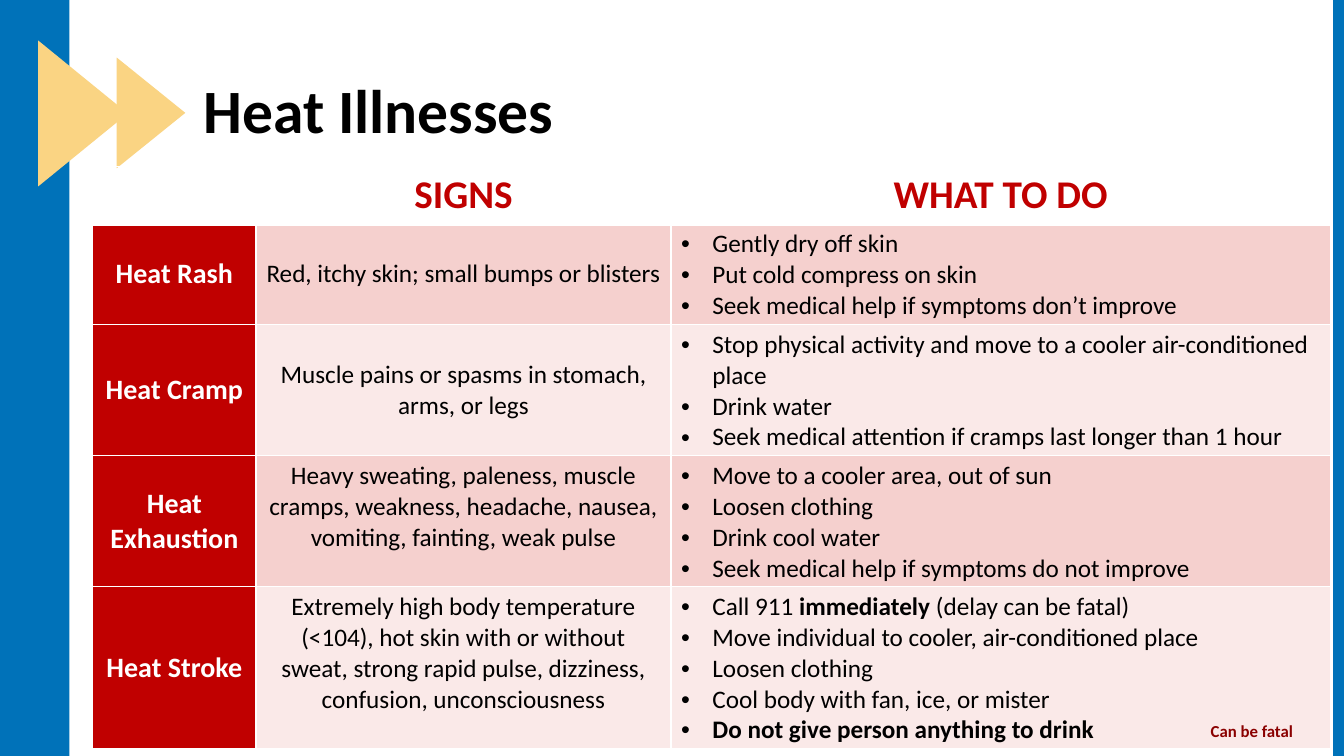
from dataclasses import dataclass
from lxml.etree import SubElement
from pptx import Presentation
from pptx.dml.color import RGBColor
from pptx.enum.shapes import MSO_SHAPE
from pptx.enum.text import MSO_ANCHOR, PP_ALIGN
from pptx.oxml.ns import qn
from pptx.util import Cm, Pt


@dataclass(frozen=True)
class Theme:
    font: str = "Calibri"
    blue: str = "0072B9"
    gold: str = "FAD483"
    red: str = "C00000"
    dark_red: str = "8A0000"
    white: str = "FFFFFF"
    black: str = "000000"
    bands: tuple = ("F5D0CE", "FAE9E8")
    title_size: int = 44
    header_size: int = 28
    label_size: int = 20
    body_size: int = 18
    note_size: int = 12


theme = Theme()


def add_text(para, text, size, color, bold=False):
    span = para.add_run()
    span.text = text
    span.font.name = theme.font
    span.font.size = Pt(size)
    span.font.bold = bold
    span.font.color.rgb = RGBColor.from_string(color)


def style_cell(cell, fill, bottom_width):
    properties = cell._tc.get_or_add_tcPr()
    for side, width in (("L", 1), ("R", 1), ("T", 1), ("B", bottom_width)):
        border = SubElement(properties, qn(f"a:ln{side}"), w=str(Pt(width)))
        border_fill = SubElement(border, qn("a:solidFill"))
        SubElement(border_fill, qn("a:srgbClr"), val=theme.white)
    if fill:
        cell.fill.solid()
        cell.fill.fore_color.rgb = RGBColor.from_string(fill)
    else:
        cell.fill.background()


deck = Presentation()
deck.slide_width, deck.slide_height = Cm(33.87), Cm(19.05)
page = deck.slides.add_slide(deck.slide_layouts[6])

decorations = [
    (MSO_SHAPE.RECTANGLE, 33.6, 0, 0.27, 19.05, 0, theme.blue),
    (MSO_SHAPE.RECTANGLE, 0, 0, 1.75, 19.05, 0, theme.blue),
    (MSO_SHAPE.ISOSCELES_TRIANGLE, 0.25, 1.73, 3.68, 2.26, 90, theme.gold),
    (MSO_SHAPE.ISOSCELES_TRIANGLE, 2.41, 1.98, 2.79, 1.73, 90, theme.gold),
]
for kind, left, top, width, height, rotation, color in decorations:
    shape = page.shapes.add_shape(kind, Cm(left), Cm(top), Cm(width), Cm(height))
    shape.rotation = rotation
    shape.shadow.inherit = False
    shape.fill.solid()
    shape.fill.fore_color.rgb = RGBColor.from_string(color)
    shape.line.fill.background()

title_box = page.shapes.add_textbox(Cm(2.34), Cm(1.02), Cm(29.21), Cm(3.68))
title_frame = title_box.text_frame
title_frame.word_wrap = True
title_frame.vertical_anchor = MSO_ANCHOR.MIDDLE
title_frame.margin_left = Cm(2.79)
title_para = title_frame.paragraphs[0]
title_para.line_spacing = 0.9
add_text(title_para, "Heat Illnesses", theme.title_size, theme.black, True)

illnesses = [
    ("Heat Rash", "Red, itchy skin; small bumps or blisters", MSO_ANCHOR.MIDDLE, [
        [("Gently dry off skin", False)],
        [("Put cold compress on skin", False)],
        [("Seek medical help if symptoms don’t improve", False)],
    ]),
    ("Heat Cramp", "Muscle pains or spasms in stomach, arms, or legs", MSO_ANCHOR.MIDDLE, [
        [("Stop physical activity and move to a cooler air-conditioned place", False)],
        [("Drink water", False)],
        [("Seek medical attention if cramps last longer than 1 hour", False)],
    ]),
    ("Heat Exhaustion", "Heavy sweating, paleness, muscle cramps, weakness, headache, "
     "nausea, vomiting, fainting, weak pulse", MSO_ANCHOR.TOP, [
        [("Move to a cooler area, out of sun", False)],
        [("Loosen clothing", False)],
        [("Drink cool water", False)],
        [("Seek medical help if symptoms do not improve", False)],
    ]),
    ("Heat Stroke", "Extremely high body temperature (<104), hot skin with or without "
     "sweat, strong rapid pulse, dizziness, confusion, unconsciousness", MSO_ANCHOR.TOP, [
        [("Call 911 ", False), ("immediately", True), (" (delay can be fatal)", False)],
        [("Move individual to cooler, air-conditioned place", False)],
        [("Loosen clothing", False)],
        [("Cool body with fan, ice, or mister", False)],
        [("Do not give person anything to drink", True)],
    ]),
]
column_widths = (4.11, 10.46, 16.61)
row_heights = (1.45, 2.54, 3.3, 3.3, 4.06)
table = page.shapes.add_table(
    len(row_heights), len(column_widths), Cm(2.34), Cm(4.19),
    Cm(sum(column_widths)), Cm(sum(row_heights)),
).table
table.first_row = table.horz_banding = False
for column, width in zip(table.columns, column_widths):
    column.width = Cm(width)
for row, height in zip(table.rows, row_heights):
    row.height = Cm(height)

for column_index, heading in enumerate(("", "SIGNS", "WHAT TO DO")):
    cell = table.cell(0, column_index)
    style_cell(cell, None, 3)
    if heading:
        cell.vertical_anchor = MSO_ANCHOR.BOTTOM
        para = cell.text_frame.paragraphs[0]
        para.alignment = PP_ALIGN.CENTER
        add_text(para, heading, theme.header_size, theme.red, True)

for row_index, (illness, signs, signs_anchor, actions) in enumerate(illnesses, 1):
    band = theme.bands[(row_index - 1) % 2]
    label_cell, signs_cell, actions_cell = table.rows[row_index].cells
    style_cell(label_cell, theme.red, 1)
    style_cell(signs_cell, band, 1)
    style_cell(actions_cell, band, 1)

    label_cell.vertical_anchor = MSO_ANCHOR.MIDDLE
    label_para = label_cell.text_frame.paragraphs[0]
    label_para.alignment = PP_ALIGN.CENTER
    add_text(label_para, illness, theme.label_size, theme.white, True)

    signs_cell.vertical_anchor = signs_anchor
    signs_para = signs_cell.text_frame.paragraphs[0]
    signs_para.alignment = PP_ALIGN.CENTER
    add_text(signs_para, signs, theme.body_size, theme.black)

    actions_frame = actions_cell.text_frame
    for action_index, action in enumerate(actions):
        para = actions_frame.add_paragraph() if action_index else actions_frame.paragraphs[0]
        properties = para._p.get_or_add_pPr()
        properties.set("marL", str(Cm(0.79)))
        properties.set("indent", str(-Cm(0.79)))
        SubElement(properties, qn("a:buFont"), typeface="Arial")
        SubElement(properties, qn("a:buChar"), char="•")
        for text, bold in action:
            add_text(para, text, theme.body_size, theme.black, bold)

note_box = page.shapes.add_textbox(Cm(30.05), Cm(18.03), Cm(3), Cm(0.76))
note_box.text_frame.word_wrap = True
note_para = note_box.text_frame.paragraphs[0]
note_para.alignment = PP_ALIGN.CENTER
add_text(note_para, "Can be fatal", theme.note_size, theme.dark_red, True)

deck.save("out.pptx")
